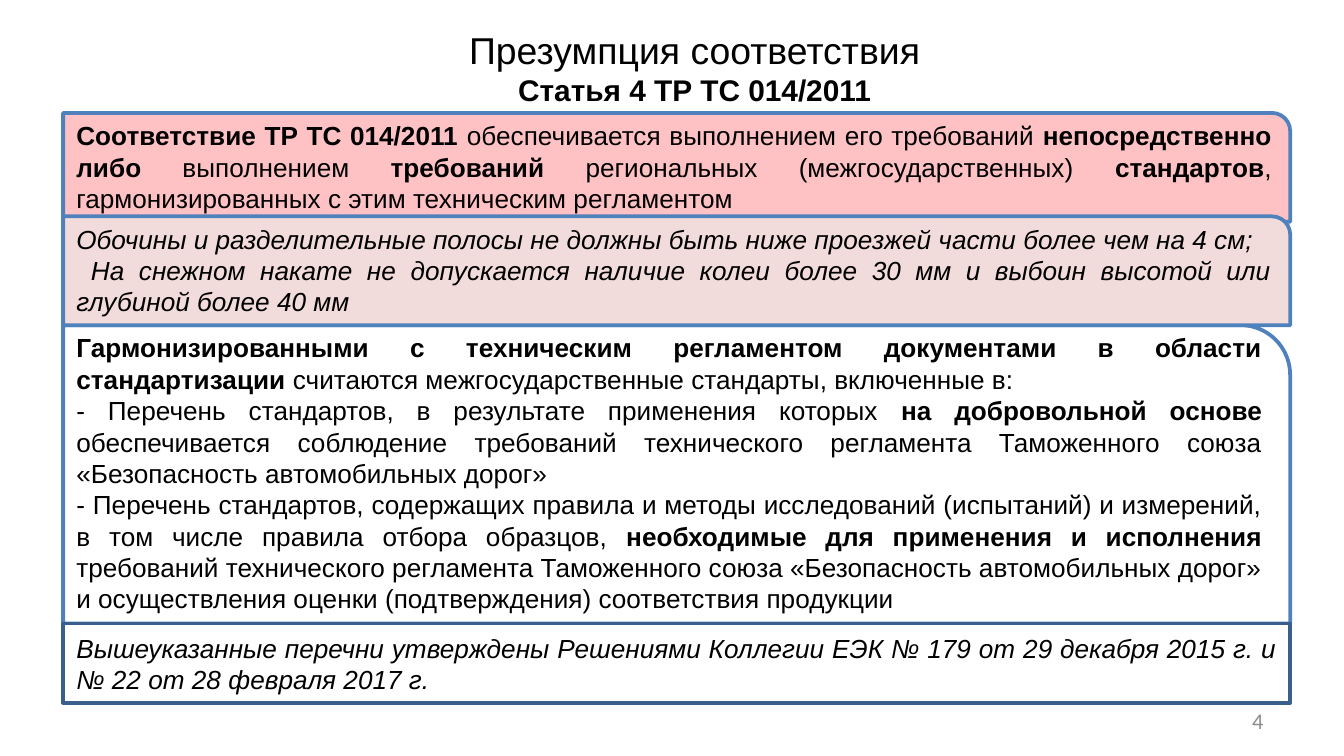
from dataclasses import dataclass
from typing import Any

from lxml.etree import SubElement
from pptx import Presentation
from pptx.dml.color import RGBColor
from pptx.enum.shapes import MSO_SHAPE
from pptx.enum.text import MSO_ANCHOR, PP_ALIGN
from pptx.oxml.ns import qn
from pptx.util import Pt

LEFT, WIDTH = 33.84, 657.36
BODY = {"name": "Arial", "size": Pt(14)}
ITALIC = {**BODY, "italic": True}


@dataclass
class Card:
    top: float
    height: float
    fill: str
    paras: list[str]
    font: dict[str, Any]
    line: str = "4F81BD"
    form: MSO_SHAPE = MSO_SHAPE.ROUND_1_RECTANGLE
    anchor: MSO_ANCHOR = MSO_ANCHOR.TOP
    alpha: int = 100


@dataclass
class Label:
    left: float
    top: float
    width: float
    height: float
    align: PP_ALIGN
    anchor: MSO_ANCHOR
    lines: list[tuple[str, dict[str, Any]]]
    color: str = "000000"


CARDS = [
    Card(60.5, 58.3, "FF7C80", [
        "**Соответствие ТР ТС 014/2011 **обеспечивается выполнением его "
        "требований **непосредственно либо **выполнением **требований** "
        "региональных (межгосударственных) **стандартов**, "
        "гармонизированных с этим техническим регламентом ",
    ], BODY, alpha=46),
    Card(174.2, 159.9, "FFFFFF", [
        "**Гармонизированными с техническим регламентом документами в области "
        "стандартизации **считаются межгосударственные стандарты, включенные в:",
        "- Перечень стандартов, в результате применения которых **на "
        "добровольной основе **обеспечивается соблюдение требований "
        "технического регламента Таможенного союза «Безопасность "
        "автомобильных дорог» ",
        "- Перечень стандартов, содержащих правила и методы исследований "
        "(испытаний) и измерений, в том числе правила отбора образцов, "
        "**необходимые для применения и исполнения **требований технического "
        "регламента Таможенного союза «Безопасность автомобильных дорог» и "
        "осуществления оценки (подтверждения) соответствия продукции",
    ], BODY),
    Card(334.1, 42.5, "FFFFFF", [
        "Вышеуказанные перечни утверждены Решениями Коллегии ЕЭК № 179 от "
        "29 декабря 2015 г. и № 22 от 28 февраля 2017 г. ",
    ], ITALIC, "3A5F8C", MSO_SHAPE.RECTANGLE, MSO_ANCHOR.MIDDLE),
    Card(115.9, 58.3, "F2DCDB", [
        "Обочины и разделительные полосы не должны быть ниже проезжей части "
        "более чем на 4 см;",
        "** **На снежном накате не допускается наличие колеи более 30 мм и "
        "выбоин высотой или глубиной более 40 мм",
    ], ITALIC),
]

LABELS = [
    Label(48.2, 10.8, 648, 42.5, PP_ALIGN.CENTER, MSO_ANCHOR.TOP, [
        ("Презумпция соответствия", {"name": "Arial", "size": Pt(20)}),
        ("**Статья 4 ТР ТС 014/2011**", {"name": "Arial", "size": Pt(16)}),
    ]),
    Label(516.2, 375.1, 167.8, 21.6, PP_ALIGN.RIGHT, MSO_ANCHOR.MIDDLE, [
        ("4", {"name": "Calibri", "size": Pt(12)}),
    ], "8C8C8C"),
]


def paint(target: Any, color: str) -> None:
    """Set a fill or font to a solid hex colour."""
    if hasattr(target, "solid"):
        target.solid()
        target.fore_color.rgb = RGBColor.from_string(color)
    else:
        target.color.rgb = RGBColor.from_string(color)


def write(shape: Any, lines: list[tuple[str, dict[str, Any]]], align: PP_ALIGN,
          anchor: MSO_ANCHOR, color: str = "000000") -> None:
    """Fill a shape with paragraphs; ** switches bold on and off."""
    frame = shape.text_frame
    frame.word_wrap = True
    frame.vertical_anchor = anchor
    for row, (text, style) in enumerate(lines):
        para = frame.add_paragraph() if row else frame.paragraphs[0]
        para.alignment = align
        for part, words in enumerate(text.split("**")):
            if not words:
                continue
            run = para.add_run()
            run.text = words
            for key, value in {**style, "bold": part % 2 == 1}.items():
                setattr(run.font, key, value)
            paint(run.font, color)


def draw_card(slide: Any, card: Card) -> None:
    shape = slide.shapes.add_shape(
        card.form, Pt(LEFT), Pt(card.top), Pt(WIDTH), Pt(card.height))
    shape.shadow.inherit = False
    paint(shape.fill, card.fill)
    if card.alpha < 100:
        tint = shape.fill._xPr.find(".//" + qn("a:srgbClr"))
        SubElement(tint, qn("a:alpha")).set("val", str(card.alpha * 1000))
    paint(shape.line.fill, card.line)
    shape.line.width = Pt(2)
    lines = [(text, card.font) for text in card.paras]
    write(shape, lines, PP_ALIGN.JUSTIFY, card.anchor)


def draw_label(slide: Any, label: Label) -> None:
    box = slide.shapes.add_textbox(
        Pt(label.left), Pt(label.top), Pt(label.width), Pt(label.height))
    write(box, label.lines, label.align, label.anchor, label.color)


def main() -> None:
    deck = Presentation()
    deck.slide_width, deck.slide_height = Pt(720), Pt(405)
    slide = deck.slides.add_slide(deck.slide_layouts[6])
    for card in CARDS:
        draw_card(slide, card)
    for label in LABELS:
        draw_label(slide, label)
    deck.save("out.pptx")


if __name__ == "__main__":
    main()
